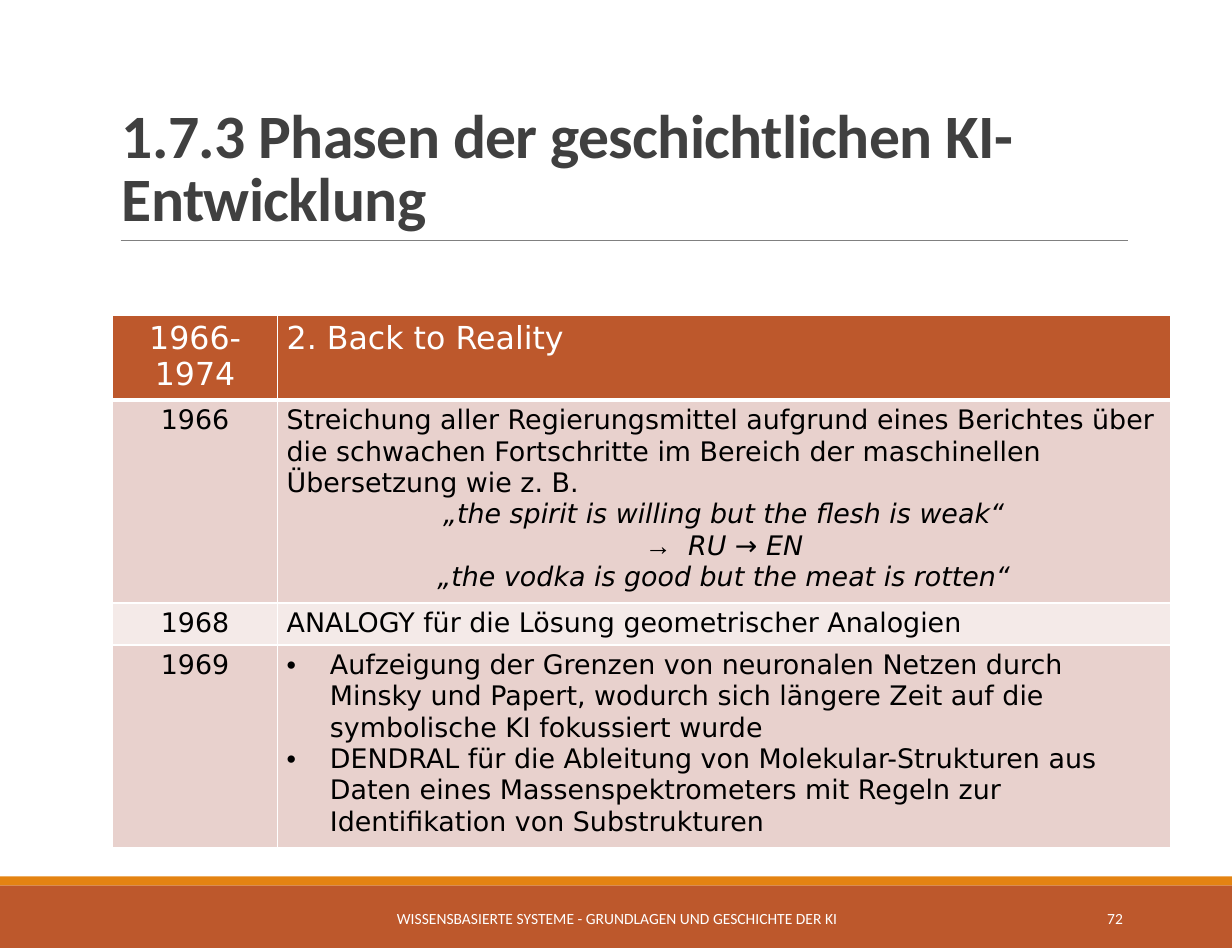
from lxml import etree
from pptx import Presentation
from pptx.dml.color import RGBColor
from pptx.enum.shapes import MSO_CONNECTOR, MSO_SHAPE
from pptx.enum.text import MSO_ANCHOR, MSO_AUTO_SIZE, PP_ALIGN
from pptx.oxml.ns import qn
from pptx.util import Inches, Pt

RECT, STRAIGHT = MSO_SHAPE.RECTANGLE, MSO_CONNECTOR.STRAIGHT
MIDDLE, BOTTOM = MSO_ANCHOR.MIDDLE, MSO_ANCHOR.BOTTOM
LEFT, CENTER, RIGHT = PP_ALIGN.LEFT, PP_ALIGN.CENTER, PP_ALIGN.RIGHT
NO_FIT = MSO_AUTO_SIZE.NONE

# Content
TITLE = "1.7.3 Phasen der geschichtlichen KI-Entwicklung"
FOOTER = "WISSENSBASIERTE SYSTEME - GRUNDLAGEN UND GESCHICHTE DER KI"
PAGE = "72"
# Each paragraph: text, style
ROWS = [
    ("1966-1974", [("2. Back to Reality", "plain")]),
    ("1966", [
        ("Streichung aller Regierungsmittel aufgrund eines Berichtes über die schwachen "
         "Fortschritte im Bereich der maschinellen Übersetzung wie z. B.", "plain"),
        ("„the spirit is willing but the flesh is weak“", "quote"),
        ("RU → EN", "arrow"),
        ("„the vodka is good but the meat is rotten“", "quote"),
    ]),
    ("1968", [("ANALOGY für die Lösung geometrischer Analogien", "plain")]),
    ("1969", [
        ("Aufzeigung der Grenzen von neuronalen Netzen durch Minsky und Papert, "
         "wodurch sich längere Zeit auf die symbolische KI fokussiert wurde", "bullet"),
        ("DENDRAL für die Ableitung von Molekular-Strukturen aus Daten eines "
         "Massenspektrometers mit Regeln zur Identifikation von Substrukturen", "bullet"),
    ]),
]

# Format
COLORS = {"rust": "BD582C", "orange": "E48312", "rule": "808080", "title": "404040",
          "white": "FFFFFF", "black": "000000", "band": "E8D1CD", "light": "F4EAE8"}
# Style: alignment, italic, bullet
STYLES = {"plain": (LEFT, False, None), "year": (CENTER, False, None),
          "quote": (CENTER, True, None), "arrow": (CENTER, True, "→"),
          "bullet": (LEFT, False, "•")}
COL_WIDTHS = [1.45, 7.85]
ROW_HEIGHTS = [0.72, 1.73, 0.37, 1.72]
MARGINS = {"margin_left": 0.08, "margin_right": 0.08, "margin_top": 0.04, "margin_bottom": 0.04}


def rgb(name):
    return RGBColor.from_string(COLORS[name])


def box(*lengths):
    return [Inches(v) for v in lengths]


def write(p, text, font, size, color, **attrs):
    r = p.add_run()
    r.text = text
    for key, value in {"name": font, "size": Pt(size), **attrs}.items():
        setattr(r.font, key, value)
    r.font.color.rgb = rgb(color)
    return r


def add_bullet(p, char):
    pPr = p._p.get_or_add_pPr()
    pPr.set("marL", str(Inches(0.38)))
    pPr.set("indent", str(-Inches(0.38)))
    etree.SubElement(pPr, qn("a:buFont"), typeface="Arial")
    etree.SubElement(pPr, qn("a:buChar"), char=char)


def add_borders(cell, bottom):
    tcPr = cell._tc.get_or_add_tcPr()
    for side, width in {"L": 1, "R": 1, "T": 1, "B": bottom}.items():
        ln = etree.SubElement(tcPr, qn(f"a:ln{side}"), w=str(Pt(width)))
        fill = etree.SubElement(ln, qn("a:solidFill"))
        etree.SubElement(fill, qn("a:srgbClr"), val=COLORS["white"])


prs = Presentation()
prs.slide_width, prs.slide_height = box(10.83, 8.33)
s = prs.slides.add_slide(prs.slide_layouts[5])

# Footer bars
for top, height, color in [(7.78, 0.56, "rust"), (7.7, 0.08, "orange")]:
    sp = s.shapes.add_shape(RECT, *box(0, top, 10.83, height))
    sp.shadow.inherit = False
    sp.fill.solid()
    sp.fill.fore_color.rgb = rgb(color)
    sp.line.fill.background()

# Rule under the title
rule = s.shapes.add_connector(STRAIGHT, *box(1.06, 2.11, 9.92, 2.11))
rule.line.color.rgb = rgb("rule")
rule.line.width = Pt(0.5)
etree.SubElement(rule._element.spPr, qn("a:effectLst"))

# Title
title = s.shapes.title
title.left, title.top, title.width, title.height = box(0.97, 0.35, 8.94, 1.76)
tf = title.text_frame
tf.word_wrap, tf.auto_size, tf.vertical_anchor = True, NO_FIT, BOTTOM
p = tf.paragraphs[0]
p.alignment, p.line_spacing = LEFT, 0.85
r = write(p, TITLE, "Calibri", 39, "title", bold=True)
r.font._element.set("spc", "-40")

# Footer text and page number
for text, left, width, align in [(FOOTER, 3.28, 4.29, CENTER), (PAGE, 8.8, 1.17, RIGHT)]:
    tf = s.shapes.add_textbox(*box(left, 7.85, width, 0.44)).text_frame
    tf.word_wrap, tf.vertical_anchor = True, MIDDLE
    tf.paragraphs[0].alignment = align
    write(tf.paragraphs[0], text, "Calibri", 9.8, "white")

# Table
table = s.shapes.add_table(len(ROWS), len(COL_WIDTHS),
                           *box(0.99, 2.77, sum(COL_WIDTHS), sum(ROW_HEIGHTS))).table
table.first_row = table.horz_banding = False
for column, width in zip(table.columns, COL_WIDTHS):
    column.width = Inches(width)
for i, (year, paragraphs) in enumerate(ROWS):
    table.rows[i].height = Inches(ROW_HEIGHTS[i])
    header = i == 0
    fill = "rust" if header else ("band" if i % 2 else "light")
    size, color = (20, "white") if header else (17, "black")
    for cell, items in zip(table.rows[i].cells, ([(year, "year")], paragraphs)):
        for key, value in MARGINS.items():
            setattr(cell, key, Inches(value))
        add_borders(cell, 3 if header else 1)
        cell.fill.solid()
        cell.fill.fore_color.rgb = rgb(fill)
        tf = cell.text_frame
        for n, (text, style) in enumerate(items):
            p = tf.add_paragraph() if n else tf.paragraphs[0]
            p.alignment, italic, char = STYLES[style]
            if char:
                add_bullet(p, char)
            write(p, text, "DejaVu Sans", size, color, italic=italic)

prs.save("out.pptx")
